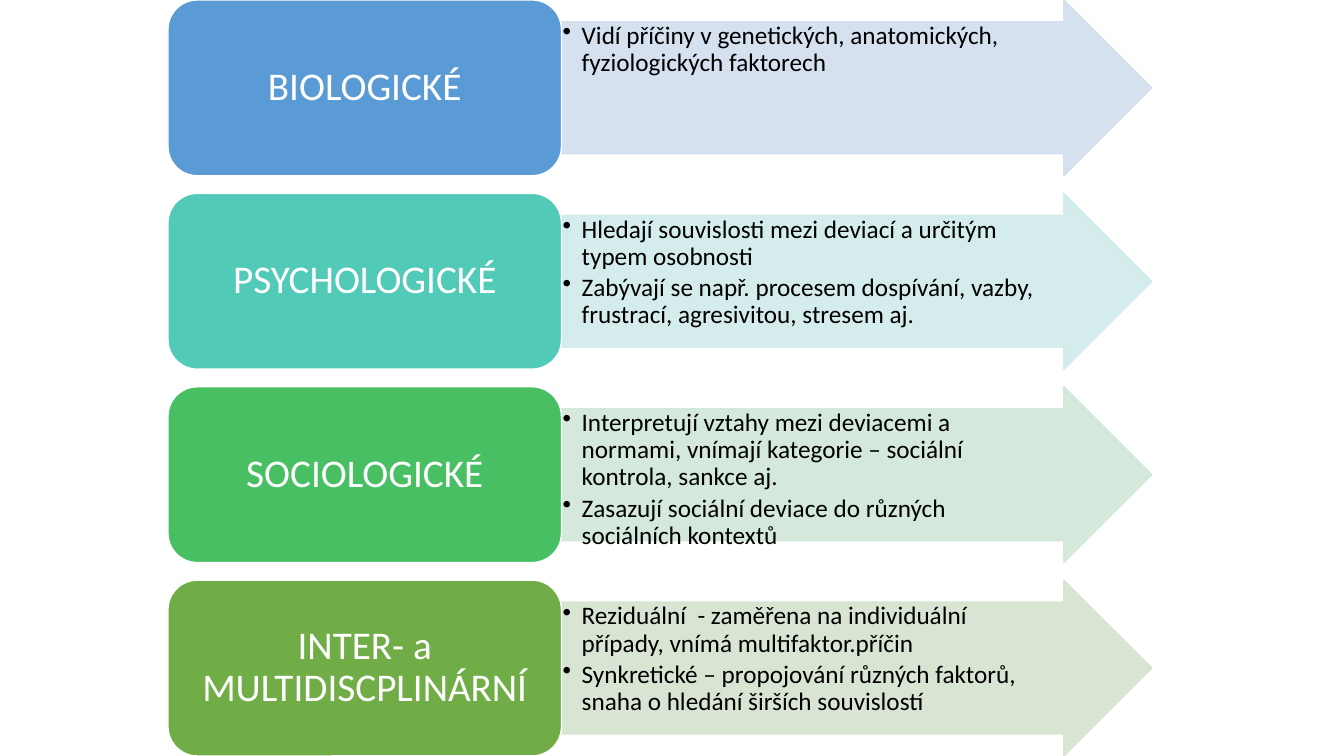
from lxml import etree
from pptx import Presentation
from pptx import util as u
from pptx.dml.color import RGBColor
from pptx.enum import shapes, text
from pptx.oxml.ns import qn

APPROACHES = [
    ("BIOLOGICKÉ", "blue",
     ["Vidí příčiny v genetických, anatomických, fyziologických faktorech"]),
    ("PSYCHOLOGICKÉ", "teal",
     ["Hledají souvislosti mezi deviací a určitým typem osobnosti",
      "Zabývají se např. procesem dospívání, vazby, frustrací, agresivitou, stresem aj."]),
    ("SOCIOLOGICKÉ", "green",
     ["Interpretují vztahy mezi deviacemi a normami, vnímají kategorie – sociální kontrola, sankce aj.",
      "Zasazují sociální deviace do různých sociálních kontextů"]),
    ("INTER- a MULTIDISCPLINÁRNÍ", "olive",
     ["Reziduální  - zaměřena na individuální případy, vnímá multifaktor.příčin",
      "Synkretické – propojování různých faktorů, snaha o hledání širších souvislostí"]),
]
COLOURS = {
    "blue": "5B9BD5", "blue tint": "D2DEEF",
    "teal": "52CAB8", "teal tint": "D0ECEA",
    "green": "49BF64", "green tint": "D0E7D8",
    "olive": "70AD47", "olive tint": "D5E3CF",
    "white": "FFFFFF", "black": "000000",
}
FONT = "Calibri"
TINT_OPACITY = 90

SLIDE_WIDTH, SLIDE_HEIGHT = u.Inches(13.33), u.Inches(7.5)
LEFT = SLIDE_WIDTH / 8
DIAGRAM_WIDTH = SLIDE_WIDTH * 0.732
LABEL_WIDTH = DIAGRAM_WIDTH * 0.4
ARROW_WIDTH = DIAGRAM_WIDTH * 0.6
GAP_SHARE = 0.1  # gap between rows, as a share of the row height
ROW_HEIGHT = SLIDE_HEIGHT / (len(APPROACHES) + GAP_SHARE * (len(APPROACHES) - 1))


def colour(name):
    return RGBColor.from_string(COLOURS[name])


def add_block(slide, preset, box, fill, line, insets):
    shape = slide.shapes.add_shape(preset, *(u.Emu(round(length)) for length in box))
    shape.shadow.inherit = False
    shape.fill.solid()
    shape.fill.fore_color.rgb = colour(fill)
    shape.line.color.rgb = colour(line)
    shape.line.width = u.Pt(1)
    frame = shape.text_frame
    frame.word_wrap = True
    frame.margin_left, frame.margin_top, frame.margin_right, frame.margin_bottom = (
        u.Inches(inset) for inset in insets)
    return shape


def style_paragraph(paragraph, size, name, alignment):
    paragraph.alignment = alignment
    paragraph.line_spacing = 0.9
    paragraph.font.size = u.Pt(size)
    paragraph.font.name = FONT
    paragraph.font.color.rgb = colour(name)


def set_opacity(shape, percent):
    """Apply one opacity to the fill and the outline."""
    for solid in shape._element.spPr.iter(qn("a:solidFill")):
        etree.SubElement(solid[0], qn("a:alpha"), val=str(percent * 1000))


def add_bullet(paragraph):
    properties = paragraph._p.get_or_add_pPr()
    indent = u.Inches(0.19)
    properties.set("marL", str(indent))
    properties.set("indent", str(-indent))
    etree.SubElement(properties, qn("a:buChar"), char="•")


def add_arrow(slide, top, tint, points):
    box = (LEFT + LABEL_WIDTH, top, ARROW_WIDTH, ROW_HEIGHT)
    arrow = add_block(slide, shapes.MSO_SHAPE.RIGHT_ARROW, box, tint, tint,
                      (0.01, 0.01, 0.45, 0.01))
    arrow.adjustments[0], arrow.adjustments[1] = 0.75, 0.5
    set_opacity(arrow, TINT_OPACITY)
    frame = arrow.text_frame
    frame.vertical_anchor = text.MSO_ANCHOR.TOP
    for index, point in enumerate(points):
        paragraph = frame.add_paragraph() if index else frame.paragraphs[0]
        paragraph.text = point
        add_bullet(paragraph)
        style_paragraph(paragraph, 18, "black", text.PP_ALIGN.LEFT)
        paragraph.space_after = u.Pt(3)


def add_label(slide, top, fill, title):
    box = (LEFT, top, LABEL_WIDTH, ROW_HEIGHT)
    label = add_block(slide, shapes.MSO_SHAPE.ROUNDED_RECTANGLE, box, fill, "white",
                      (0.12, 0.06, 0.12, 0.06))
    label.text_frame.vertical_anchor = text.MSO_ANCHOR.MIDDLE
    paragraph = label.text_frame.paragraphs[0]
    paragraph.text = title
    style_paragraph(paragraph, 28, "white", text.PP_ALIGN.CENTER)


def main():
    presentation = Presentation()
    presentation.slide_width, presentation.slide_height = SLIDE_WIDTH, SLIDE_HEIGHT
    slide = presentation.slides.add_slide(presentation.slide_layouts[6])
    for row, (title, name, points) in enumerate(APPROACHES):
        top = row * ROW_HEIGHT * (1 + GAP_SHARE)
        add_arrow(slide, top, f"{name} tint", points)
        add_label(slide, top, name, title)
    presentation.save("out.pptx")


if __name__ == "__main__":
    main()
